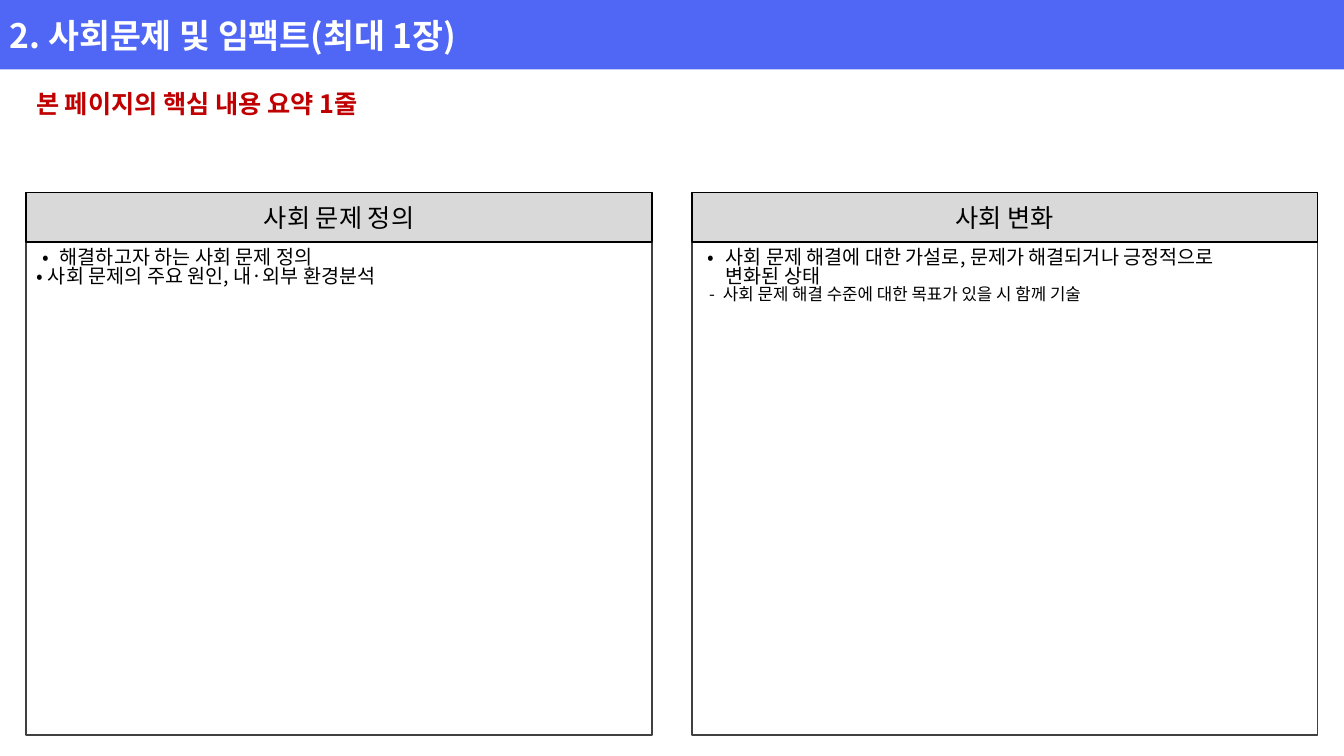
from pptx import Presentation
from pptx.dml.color import RGBColor
from pptx.enum.shapes import MSO_SHAPE as Shape
from pptx.enum.text import MSO_ANCHOR as Anchor, PP_ALIGN as Align
from pptx.oxml.ns import qn
from pptx.util import Cm, Pt
from lxml.etree import SubElement

FONT = "Noto Sans CJK KR"
TITLE = "2. 사회문제 및 임팩트(최대 1장)"
SUMMARY = "본 페이지의 핵심 내용 요약 1줄"
# bullet, text, size, bullet left, text left
PANELS = [
    ("사회 문제 정의", [
        ("•", "해결하고자 하는 사회 문제 정의", 14, 0.15, 0.6),
        ("•", "사회 문제의 주요 원인, 내·외부 환경분석", 14, 0, 0.3),
    ]),
    ("사회 변화", [
        ("•", "사회 문제 해결에 대한 가설로, 문제가 해결되거나 긍정적으로\v변화된 상태", 14, 0.15, 0.6),
        ("-", "사회 문제 해결 수준에 대한 목표가 있을 시 함께 기술", 12, 0.18, 0.53),
    ]),
]

SLIDE_W, SLIDE_H = 33.87, 19.05
MARGIN = 0.66
TITLE_H, SUMMARY_H = 1.75, 1.35
PANEL_TOP, PANEL_W, PANEL_H = 4.85, 15.77, 13.67
HEADING_H = 1.25
PANEL_STEP = SLIDE_W - 2 * MARGIN - PANEL_W


def color(value):
    return RGBColor.from_string(value)


def style(paragraph, size, ink, bold=False):
    for run in paragraph.runs:
        run.font.name = FONT
        run.font.size = Pt(size)
        run.font.bold = bold
        run.font.color.rgb = color(ink)
        SubElement(run.font._element, qn("a:ea"), typeface=FONT)


def add_box(left, top, width, height, fill=None, line=None):
    box = slide.shapes.add_shape(
        Shape.RECTANGLE, Cm(left), Cm(top), Cm(width), Cm(height))
    box.shadow.inherit = False
    if fill:
        box.fill.solid()
        box.fill.fore_color.rgb = color(fill)
    else:
        box.fill.background()
    if line:
        box.line.color.rgb = color(line)
        box.line.width = Pt(1)
    else:
        box.line.fill.background()
    return box


def write(box, text, size, ink, align=Align.LEFT, bold=False):
    frame = box.text_frame
    frame.word_wrap = True
    frame.vertical_anchor = Anchor.MIDDLE
    frame.text = text
    frame.paragraphs[0].alignment = align
    style(frame.paragraphs[0], size, ink, bold)
    return frame.paragraphs[0]


def add_points(left, top, points):
    frame = slide.shapes.add_textbox(
        Cm(left), Cm(top), Cm(PANEL_W), Cm(1.7)).text_frame
    frame.word_wrap = True
    frame.text = "\n".join(point[1] for point in points)
    for paragraph, (bullet, _, size, bullet_left, text_left) in zip(frame.paragraphs, points):
        paragraph.line_spacing = 0.81
        style(paragraph, size, "000000")
        props = paragraph._p.get_or_add_pPr()
        props.set("marL", str(Cm(text_left)))
        props.set("indent", str(Cm(bullet_left) - Cm(text_left)))
        SubElement(props, qn("a:buFont"), typeface=FONT)
        SubElement(props, qn("a:buChar"), char=bullet)


deck = Presentation()
deck.slide_width, deck.slide_height = Cm(SLIDE_W), Cm(SLIDE_H)
slide = deck.slides.add_slide(deck.slide_layouts[6])

write(add_box(0, 0, SLIDE_W, TITLE_H, fill="5067F5"), TITLE, 24, "FFFFFF", bold=True)
summary = slide.shapes.add_textbox(
    Cm(MARGIN), Cm(TITLE_H), Cm(SLIDE_W - 2 * MARGIN), Cm(SUMMARY_H))
write(summary, SUMMARY, 18, "C00000", bold=True).line_spacing = 1.5

for column, (heading, points) in enumerate(PANELS):
    left = MARGIN + column * PANEL_STEP
    add_box(left, PANEL_TOP, PANEL_W, PANEL_H, line="404040")
    add_points(left, PANEL_TOP + HEADING_H + 0.05, points)
    bar = add_box(left, PANEL_TOP, PANEL_W, HEADING_H, fill="D9D9D9", line="000000")
    write(bar, heading, 18, "000000", Align.CENTER)

deck.save("out.pptx")
